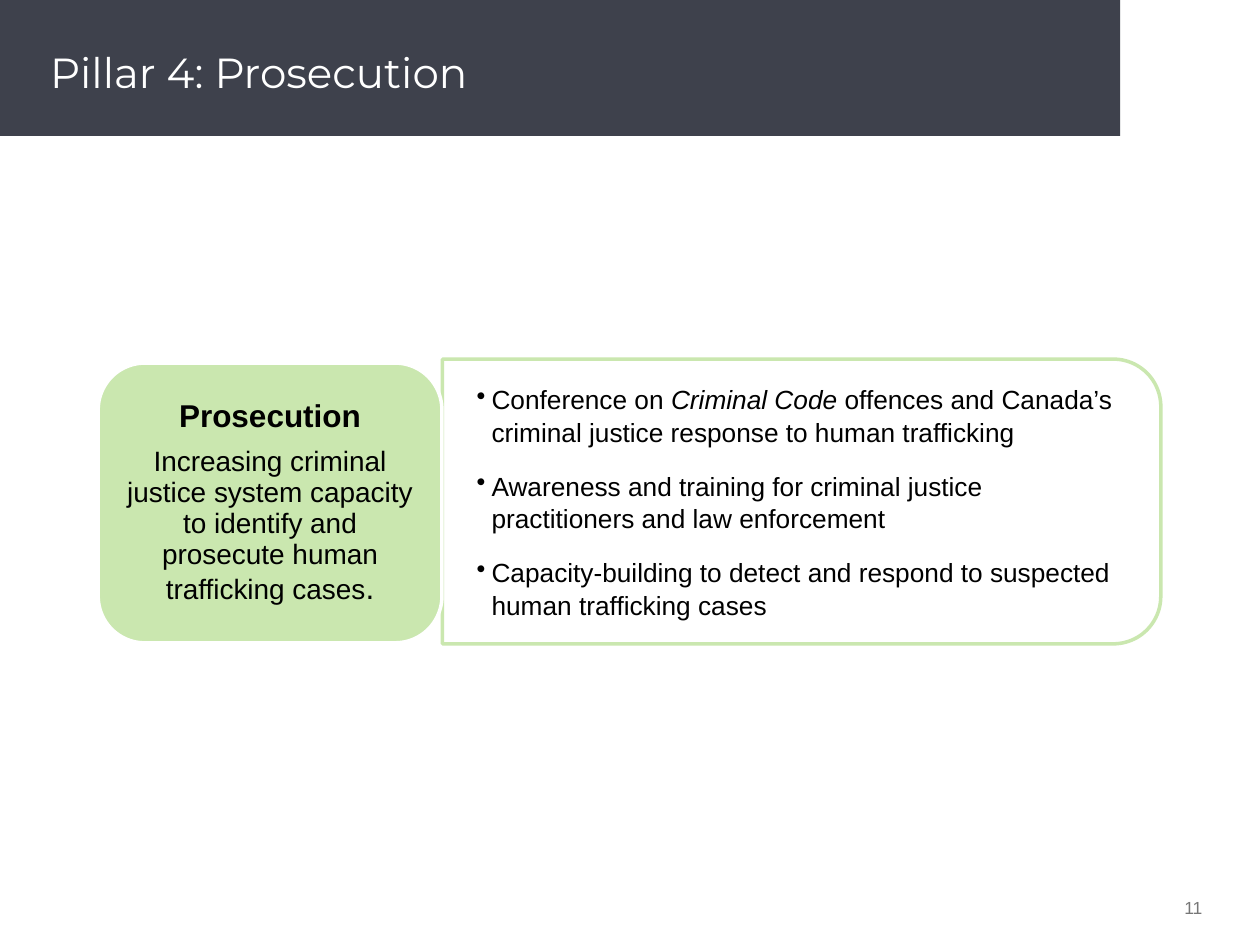
from lxml import etree
from pptx import Presentation
from pptx.dml.color import RGBColor
from pptx.enum.shapes import MSO_SHAPE
from pptx.enum.text import MSO_ANCHOR, PP_ALIGN
from pptx.oxml.ns import qn
from pptx.util import Cm, Pt

RECTANGLE = MSO_SHAPE.RECTANGLE
ROUNDED = MSO_SHAPE.ROUNDED_RECTANGLE
TWO_ROUNDED = MSO_SHAPE.ROUND_2_SAME_RECTANGLE
TOP, MIDDLE = MSO_ANCHOR.TOP, MSO_ANCHOR.MIDDLE
LEFT, CENTER, RIGHT = PP_ALIGN.LEFT, PP_ALIGN.CENTER, PP_ALIGN.RIGHT

SLATE = RGBColor(0x3E, 0x41, 0x4C)
GREEN = RGBColor(0xCA, 0xE7, 0xAF)
GRAY = RGBColor(0x77, 0x77, 0x77)
WHITE = RGBColor(0xFF, 0xFF, 0xFF)
BLACK = RGBColor(0, 0, 0)

ACTIONS = [
    [("Conference on ", {}), ("Criminal Code", {"italic": True}),
     (" offences and Canada’s criminal justice response to human trafficking", {})],
    [("Awareness and training for criminal justice practitioners and law enforcement", {})],
    [("Capacity-building to detect and respond to suspected human trafficking cases", {})],
]
GOAL = [
    [("Prosecution", {"size": 18, "bold": True})],
    [("Increasing criminal justice system capacity to identify and prosecute "
      "human trafficking cases", {}), (".", {"size": 18})],
]


def add_shape(page, kind, box, fill=None, line=None):
    """Add a preset shape with a flat fill and a 2 pt outline."""
    shape = page.shapes.add_shape(kind, *(Cm(length) for length in box))
    shape.shadow.inherit = False
    if fill is None:
        shape.fill.background()
    else:
        shape.fill.solid()
        shape.fill.fore_color.rgb = fill
    if line is None:
        shape.line.fill.background()
    else:
        shape.line.color.rgb = line
        shape.line.width = Pt(2)
    return shape


def add_text_box(page, box):
    """Add an empty text box."""
    return page.shapes.add_textbox(*(Cm(length) for length in box))


def add_bullet(para, indent):
    """Give a paragraph a round bullet with a hanging indent."""
    properties = para._p.get_or_add_pPr()
    properties.set("marL", str(Cm(indent)))
    properties.set("indent", str(-Cm(indent)))
    etree.SubElement(properties, qn("a:buChar"), char="•")


def add_text_shadow(span):
    """Cast a soft black shadow from a run."""
    effects = etree.Element(qn("a:effectLst"))
    shadow = etree.SubElement(effects, qn("a:outerShdw"), blurRad="38100",
                              dist="38100", dir="2700000")
    color = etree.SubElement(shadow, qn("a:srgbClr"), val="000000")
    etree.SubElement(color, qn("a:alpha"), val="43000")
    span.font.fill._xPr.find(qn("a:solidFill")).addnext(effects)


def write_text(shape, paragraphs, size, color=BLACK, font="Arial", align=LEFT, anchor=MIDDLE,
               insets=(0.25, 0.13, 0.25, 0.13), spacing=None, after=0, bullet=None, shadow=False):
    """Fill a shape with paragraphs made of (text, format) runs."""
    frame = shape.text_frame
    frame.word_wrap = True
    frame.vertical_anchor = anchor
    (frame.margin_left, frame.margin_top,
     frame.margin_right, frame.margin_bottom) = (Cm(inset) for inset in insets)
    for index, runs in enumerate(paragraphs):
        para = frame.add_paragraph() if index else frame.paragraphs[0]
        if bullet:
            add_bullet(para, bullet)
        para.alignment = align
        para.line_spacing = spacing
        para.space_after = Pt(after)
        for text, style in runs:
            span = para.add_run()
            span.text = text
            span.font.name = font
            span.font.size = Pt(style.get("size", size))
            span.font.bold = style.get("bold", False)
            span.font.italic = style.get("italic", False)
            span.font.color.rgb = color
            if shadow:
                add_text_shadow(span)


def add_header(page, left, top, width, height):
    """Draw the title bar and its title."""
    add_shape(page, RECTANGLE, (left, top, width, height), fill=SLATE)
    title = add_text_box(page, (left + 0.76, top + 0.28, width, 2.34))
    write_text(title, [[("Pillar 4: Prosecution", {})]], 24, WHITE, "Montserrat", shadow=True)


def add_actions(page, left, top, width, height):
    """Draw the outlined panel, rounded on its right, with the bullet list."""
    shift = (width - height) / 2
    panel = add_shape(page, TWO_ROUNDED, (left + shift, top - shift, height, width), line=GREEN)
    panel.rotation = 90
    text = add_text_box(page, (left, top + 0.28, width - 0.28, height - 0.56))
    write_text(text, ACTIONS, 15, insets=(0.69, 0.36, 0.65, 0.36),
               spacing=1.04, after=12, bullet=0.3)


def add_goal(page, left, top, width, height):
    """Draw the filled card that names the pillar and its goal."""
    card = add_shape(page, ROUNDED, (left, top, width, height), fill=GREEN, line=WHITE)
    write_text(card, GOAL, 16, align=CENTER, insets=(0.18, 0.1, 0.18, 0.1),
               spacing=0.93, after=6.5)


def add_page_number(page, left, top, width, height):
    """Write the page number."""
    number = add_text_box(page, (left, top, width, height))
    write_text(number, [[("11", {})]], 10, GRAY, align=RIGHT, anchor=TOP)


def main():
    """Build the deck and save it."""
    deck = Presentation()
    deck.slide_width, deck.slide_height = Cm(25.4), Cm(19.05)
    page = deck.slides.add_slide(deck.slide_layouts[6])
    add_header(page, 0, 0, 22.58, 2.74)
    add_actions(page, 8.92, 7.24, 14.48, 5.74)
    add_goal(page, 1.98, 7.32, 6.93, 5.64)
    add_page_number(page, 18.57, 17.96, 5.92, 0.71)
    deck.save("out.pptx")


if __name__ == "__main__":
    main()
